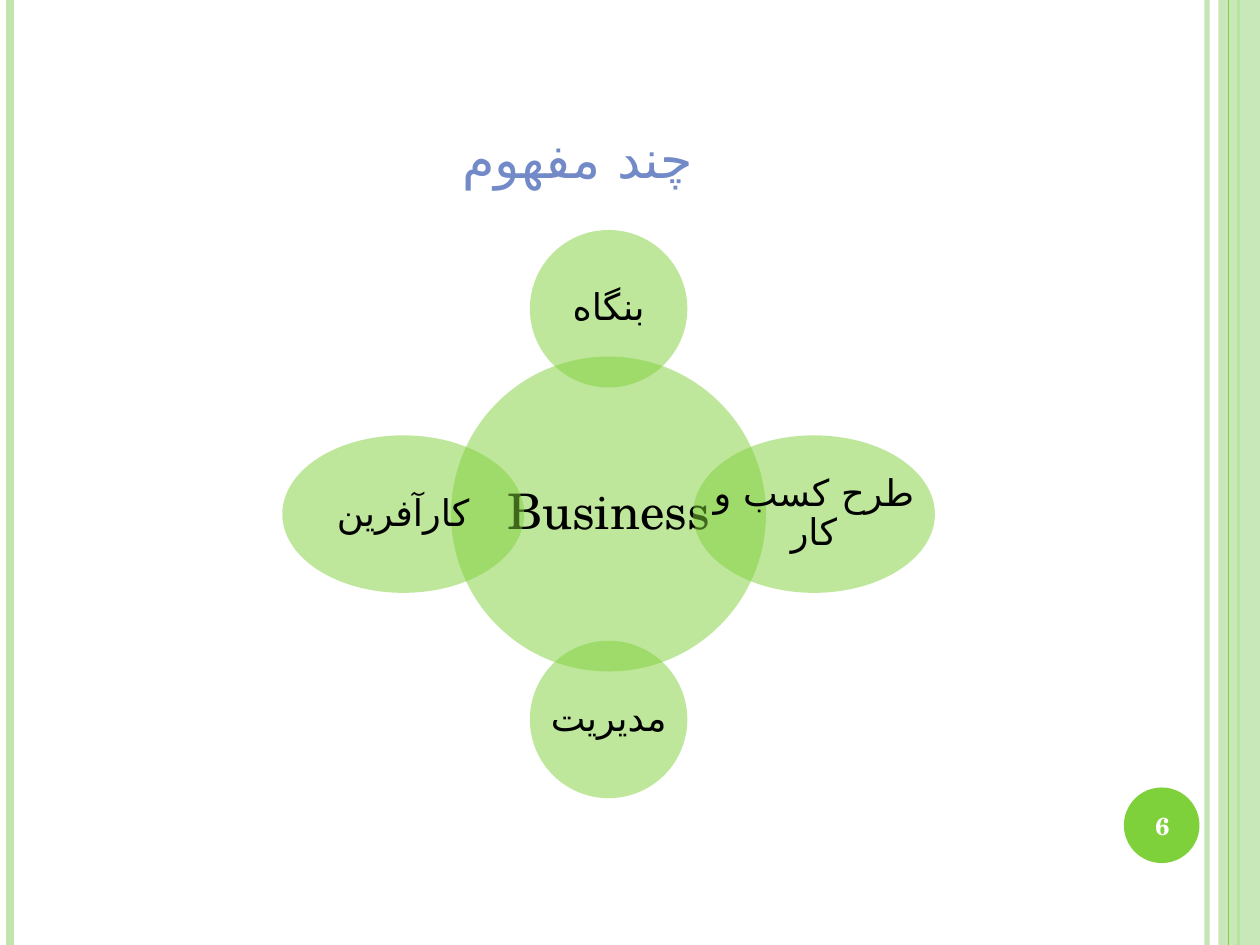
from dataclasses import dataclass
from typing import Any

from lxml import etree
from pptx import Presentation
from pptx.dml.color import RGBColor
from pptx.enum.shapes import MSO_CONNECTOR, MSO_SHAPE
from pptx.enum.text import MSO_ANCHOR, MSO_AUTO_SIZE, PP_ALIGN
from pptx.oxml.ns import qn
from pptx.util import Inches, Pt

OVAL, RECT = MSO_SHAPE.OVAL, MSO_SHAPE.RECTANGLE
STRAIGHT = MSO_CONNECTOR.STRAIGHT
MIDDLE, BOTTOM = MSO_ANCHOR.MIDDLE, MSO_ANCHOR.BOTTOM
CENTER = PP_ALIGN.CENTER
FIXED = MSO_AUTO_SIZE.NONE
WIDE, HIGH = 10, 7.5


@dataclass(frozen=True)
class Theme:
    font: str = "TeX Gyre Schola"
    script: str = "DejaVu Sans"
    green: str = "7FD13B"
    pale: str = "C0E5AF"
    blue: str = "738AC8"
    black: str = "000000"
    white: str = "FFFFFF"
    title: int = 30
    hub: int = 28
    label: int = 21
    number: int = 14


@dataclass(frozen=True)
class Box:
    left: float
    top: float
    width: float
    height: float

    def size(self) -> tuple:
        return tuple(Inches(v) for v in (self.left, self.top, self.width, self.height))


@dataclass(frozen=True)
class Stripe:
    x: float
    color: str
    weight: float
    alpha: int = 100


@dataclass(frozen=True)
class Bubble:
    """An oval, placed by its centre's offset from the hub's centre."""
    text: str
    dx: float
    dy: float
    width: float
    height: float
    points: int
    inset: float = 0.03


THEME = Theme()
HUB_X, HUB_Y = 4.83, 4.08
REACH = 1.63
SMALL, BROAD = 1.25, 1.92

BACK = [
    Stripe(9.58, THEME.pale, 3, 93),
    Stripe(0.08, THEME.pale, 4.5),
    Stripe(9.83, THEME.green, 1.5),
]
FRONT = Stripe(9.75, THEME.green, 0.75)
BUBBLES = [
    Bubble("Business", 0, 0, 2.5, 2.5, THEME.hub, 0.04),
    Bubble("بنگاه", 0, -REACH, SMALL, SMALL, THEME.label),
    Bubble("طرح کسب و کار", REACH, 0, BROAD, SMALL, THEME.label),
    Bubble("مدیریت", 0, REACH, SMALL, SMALL, THEME.label),
    Bubble("کارآفرین", -REACH, 0, BROAD, SMALL, THEME.label),
]


def apply(target: Any, values: dict) -> None:
    for name, value in values.items():
        setattr(target, name, value)


def fade(part: Any, alpha: int) -> None:
    """Set the opacity, in percent, of the solid colour within an element."""
    if alpha < 100:
        color = next(part.iter(qn("a:srgbClr")))
        etree.SubElement(color, qn("a:alpha"), val=str(alpha * 1000))


def draw_stripe(slide: Any, stripe: Stripe) -> None:
    x = Inches(stripe.x)
    line = slide.shapes.add_connector(STRAIGHT, x, 0, x, Inches(HIGH))
    line.line.color.rgb = RGBColor.from_string(stripe.color)
    line.line.width = Pt(stripe.weight)
    props = line._element.spPr
    fade(props, stripe.alpha)
    etree.SubElement(props, qn("a:effectLst"))


def draw_shape(slide: Any, kind: Any, box: Box, color: str, alpha: int = 100) -> None:
    shape = slide.shapes.add_shape(kind, *box.size())
    shape.shadow.inherit = False
    shape.fill.solid()
    shape.fill.fore_color.rgb = RGBColor.from_string(color)
    shape.line.fill.background()
    fade(shape._element.spPr, alpha)


def set_text(shape: Any, text: str, points: int, color: str, anchor: Any = MIDDLE,
             bold: bool = False) -> Any:
    """Fill a shape with one centred paragraph and return its run."""
    frame = shape.text_frame
    apply(frame, {"word_wrap": True, "auto_size": FIXED, "vertical_anchor": anchor})
    para = frame.paragraphs[0]
    para.alignment = CENTER
    run = para.add_run()
    run.text = text
    apply(run.font, {"name": THEME.font, "size": Pt(points), "bold": bold})
    run.font.color.rgb = RGBColor.from_string(color)
    etree.SubElement(run._r.get_or_add_rPr(), qn("a:cs"), typeface=THEME.script)
    return run


def draw_bubble(slide: Any, bubble: Bubble) -> None:
    box = Box(HUB_X + bubble.dx - bubble.width / 2,
              HUB_Y + bubble.dy - bubble.height / 2,
              bubble.width, bubble.height)
    draw_shape(slide, OVAL, box, THEME.green, 50)
    label = slide.shapes.add_textbox(*box.size())
    set_text(label, bubble.text, bubble.points, THEME.black)
    sides = ("left", "top", "right", "bottom")
    apply(label.text_frame, {f"margin_{side}": Inches(bubble.inset) for side in sides})
    label.text_frame.paragraphs[0].line_spacing = 0.9


def draw_title(slide: Any, text: str) -> None:
    title = slide.shapes.title
    names = ("left", "top", "width", "height")
    apply(title, dict(zip(names, Box(0.5, 0.3, 8.17, 1.25).size())))
    run = set_text(title, text, THEME.title, THEME.blue, BOTTOM)
    run._r.get_or_add_rPr().set("cap", "small")
    title.text_frame.paragraphs[0]._p.get_or_add_pPr().set("rtl", "1")


def main() -> None:
    deck = Presentation()
    apply(deck, {"slide_width": Inches(WIDE), "slide_height": Inches(HIGH)})
    slide = deck.slides.add_slide(deck.slide_layouts[5])

    for stripe in BACK:
        draw_stripe(slide, stripe)
    draw_shape(slide, RECT, Box(9.67, 0, 0.33, HIGH), THEME.pale, 87)
    draw_stripe(slide, FRONT)
    draw_shape(slide, OVAL, Box(8.92, 6.25, 0.6, 0.6), THEME.green)

    draw_title(slide, "چند مفهوم")
    for bubble in BUBBLES:
        draw_bubble(slide, bubble)

    number = slide.shapes.add_textbox(*Box(8.89, 6.27, 0.67, 0.57).size())
    set_text(number, "6", THEME.number, THEME.white, bold=True)
    deck.save("out.pptx")


if __name__ == "__main__":
    main()
